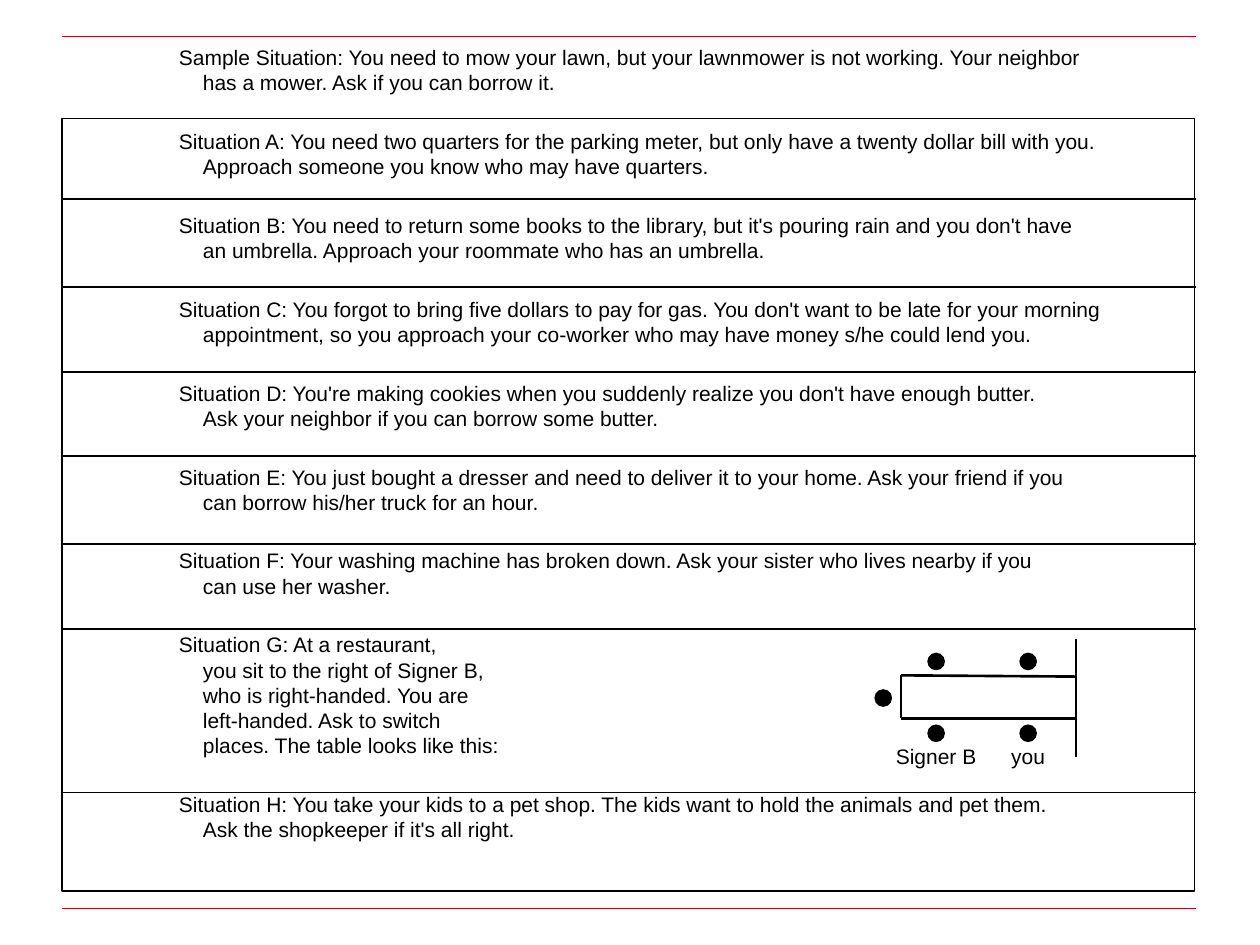
from dataclasses import dataclass
from typing import NamedTuple

from pptx import Presentation
from pptx.dml.color import RGBColor
from pptx.enum.shapes import MSO_CONNECTOR as Connector, MSO_SHAPE as Preset
from pptx.enum.text import MSO_ANCHOR as Anchor, MSO_AUTO_SIZE as AutoSize, PP_ALIGN as Align
from pptx.oxml.ns import qn
from pptx.util import Emu, Inches, Pt

COLUMNS, ROWS = 1000, 750


@dataclass(frozen=True)
class Theme:
    ink: RGBColor = RGBColor(0x00, 0x00, 0x00)
    accent: RGBColor = RGBColor(0xBD, 0x06, 0x23)
    font: str = "Arial"
    size: Pt = Pt(12)
    leading: Pt = Pt(14.4)
    gap: Pt = Pt(19.2)
    indent: Inches = Inches(0.19)
    thin: Pt = Pt(1)
    thick: Pt = Pt(1.5)


class Area(NamedTuple):
    """Left, top, width and height in grid columns and rows."""
    left: float
    top: float
    width: float
    height: float


class Seat(NamedTuple):
    """Centre of a seat at the restaurant table, and who sits there."""
    column: float
    row: float
    name: str = ""


THEME = Theme()
FRAME = Area(49, 94, 899, 613)
BODY = Area(132, 30, 761, 646)
TABLE = Area(715, 536, 139, 34)
WALL_TOP, WALL_BOTTOM = 507, 601
RULE_ROWS = (29, 721)
DIVIDER_ROWS = (158, 228, 295.5, 362, 432, 499, 629)
SEAT_SIZE = 14
SEATS = (
    Seat(701, 554),
    Seat(743, 525),
    Seat(816, 525),
    Seat(743, 582, "Signer B"),
    Seat(816, 582, "you"),
)
SITUATIONS = (
    "Sample Situation: You need to mow your lawn, but your lawnmower is not working. "
    "Your neighbor has a mower. Ask if you can borrow it.",
    "Situation A: You need two quarters for the parking meter, but only have a twenty "
    "dollar bill with you. Approach someone you know who may have quarters.",
    "Situation B: You need to return some books to the library, but it's pouring rain "
    "and you don't have\nan umbrella. Approach your roommate who has an umbrella.",
    "Situation C: You forgot to bring five dollars to pay for gas. You don't want to be "
    "late for your morning appointment, so you approach your co-worker who may have "
    "money s/he could lend you.",
    "Situation D: You're making cookies when you suddenly realize you don't have enough "
    "butter.\nAsk your neighbor if you can borrow some butter.",
    "Situation E: You just bought a dresser and need to deliver it to your home. Ask "
    "your friend if you\ncan borrow his/her truck for an hour.",
    "Situation F: Your washing machine has broken down. Ask your sister who lives nearby "
    "if you\ncan use her washer.",
    "Situation G: At a restaurant,\nyou sit to the right of Signer B,\nwho is "
    "right-handed. You are\nleft-handed. Ask to switch\nplaces. The table looks like this:",
    "Situation H: You take your kids to a pet shop. The kids want to hold the animals "
    "and pet them.\nAsk the shopkeeper if it's all right.",
)

deck = Presentation()
deck.slide_width, deck.slide_height = Inches(10), Inches(7.5)
page = deck.slides.add_slide(deck.slide_layouts[1])


def across(columns: float) -> Emu:
    return Emu(round(deck.slide_width * columns / COLUMNS))


def down(rows: float) -> Emu:
    return Emu(round(deck.slide_height * rows / ROWS))


def place(area: Area) -> tuple[Emu, Emu, Emu, Emu]:
    return across(area.left), down(area.top), across(area.width), down(area.height)


def draw_line(start: tuple[float, float], end: tuple[float, float],
              color: RGBColor = THEME.ink, width: Pt = THEME.thin) -> None:
    line = page.shapes.add_connector(
        Connector.STRAIGHT, across(start[0]), down(start[1]), across(end[0]), down(end[1]))
    line.line.color.rgb = color
    line.line.width = width
    properties = line._element.spPr
    properties.append(properties.makeelement(qn("a:effectLst"), {}))


def format_text(para) -> None:
    para.font.name = THEME.font
    para.font.size = THEME.size
    para.font.color.rgb = THEME.ink


def write_situations() -> None:
    body = page.placeholders[1]
    body.left, body.top, body.width, body.height = place(BODY)
    frame = body.text_frame
    frame.auto_size = AutoSize.NONE
    frame.vertical_anchor = Anchor.TOP
    for number, situation in enumerate(SITUATIONS):
        para = frame.add_paragraph() if number else frame.paragraphs[0]
        para.text = situation
        para.line_spacing = THEME.leading
        para.space_before = THEME.gap if number else Pt(0)
        format_text(para)
        properties = para._p.get_or_add_pPr()
        properties.set("marL", str(THEME.indent))
        properties.set("indent", str(-THEME.indent))
        no_bullet = properties.makeelement(qn("a:buNone"), {})
        properties.insert_element_before(no_bullet, "a:tabLst", "a:defRPr", "a:extLst")


def draw_frame() -> None:
    box = page.shapes.add_shape(Preset.RECTANGLE, *place(FRAME))
    box.shadow.inherit = False
    box.fill.background()
    box.line.color.rgb = THEME.ink
    box.line.width = THEME.thin


def draw_table() -> None:
    """Draw the restaurant table, open towards the wall on its right."""
    right, bottom = TABLE.left + TABLE.width, TABLE.top + TABLE.height
    for start, end in (
        ((TABLE.left, TABLE.top), (right, TABLE.top + 1)),
        ((TABLE.left, bottom), (right, bottom)),
        ((TABLE.left, TABLE.top), (TABLE.left, bottom)),
        ((right, WALL_TOP), (right, WALL_BOTTOM)),
    ):
        draw_line(start, end, width=THEME.thick)


def draw_seat(seat: Seat) -> None:
    half = SEAT_SIZE / 2
    dot = page.shapes.add_shape(
        Preset.OVAL, *place(Area(seat.column - half, seat.row - half, SEAT_SIZE, SEAT_SIZE)))
    dot.shadow.inherit = False
    dot.fill.solid()
    dot.fill.fore_color.rgb = THEME.ink
    dot.line.fill.background()
    if seat.name:
        label = page.shapes.add_textbox(*place(Area(seat.column - 45, seat.row + 3, 90, 30)))
        label.text_frame.word_wrap = False
        para = label.text_frame.paragraphs[0]
        para.text = seat.name
        para.alignment = Align.CENTER
        format_text(para)


def main() -> None:
    title = page.shapes.title._element
    title.getparent().remove(title)
    right = FRAME.left + FRAME.width + 1
    for row in RULE_ROWS:
        draw_line((FRAME.left, row), (right, row), THEME.accent)
    draw_frame()
    write_situations()
    for row in DIVIDER_ROWS:
        draw_line((FRAME.left, row), (right, row))
    draw_table()
    for seat in SEATS:
        draw_seat(seat)
    deck.save("out.pptx")


if __name__ == "__main__":
    main()
